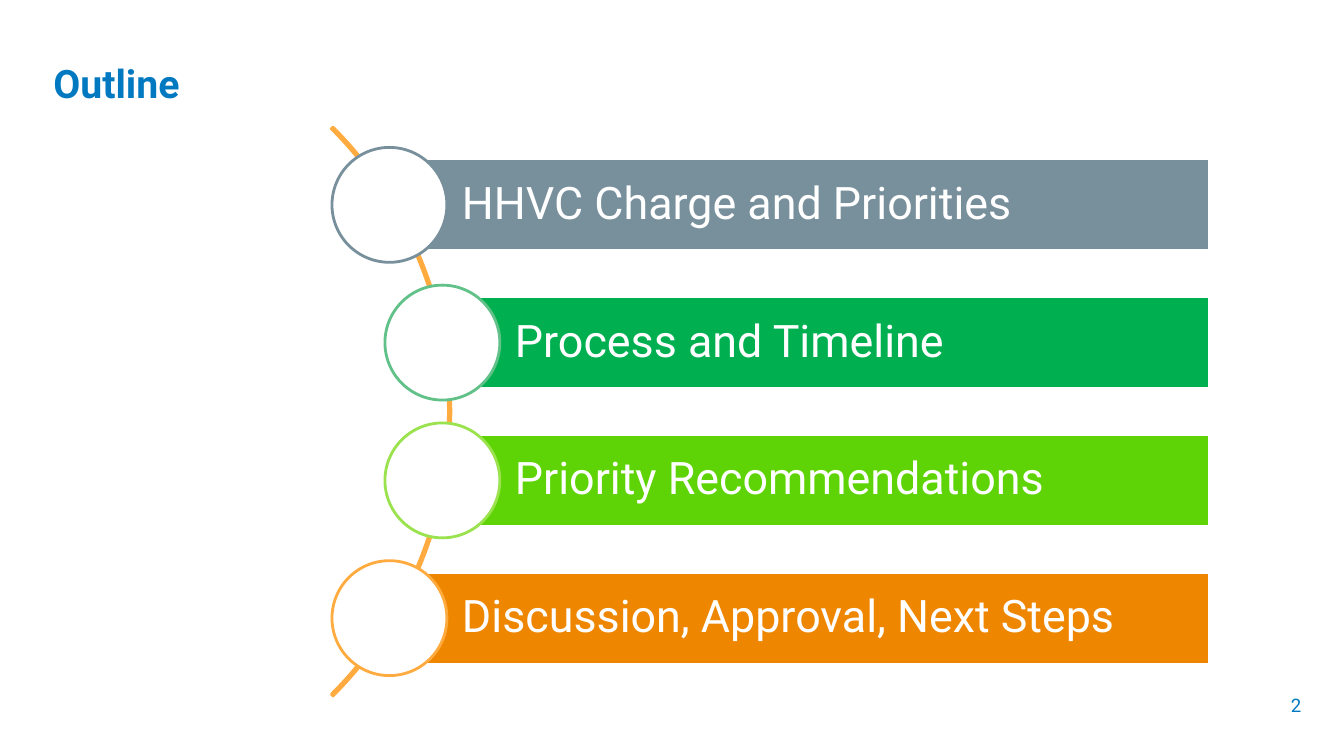
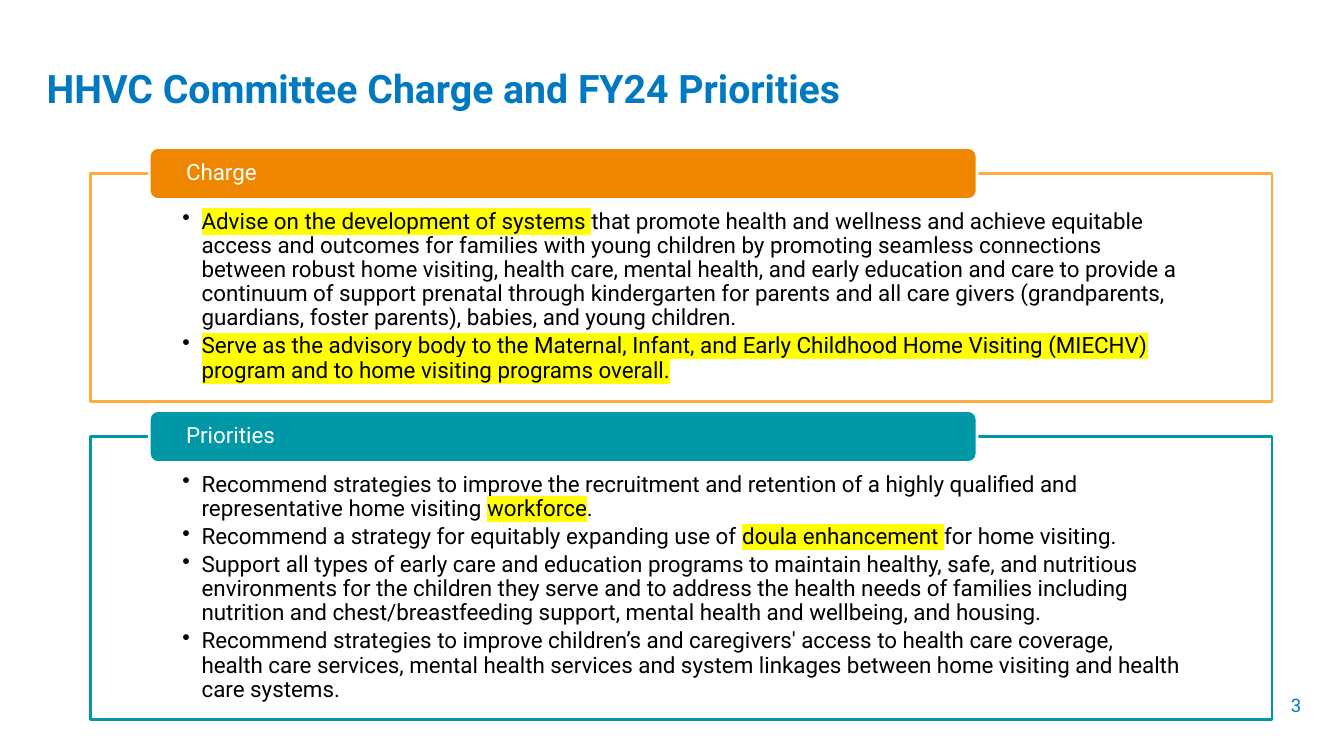
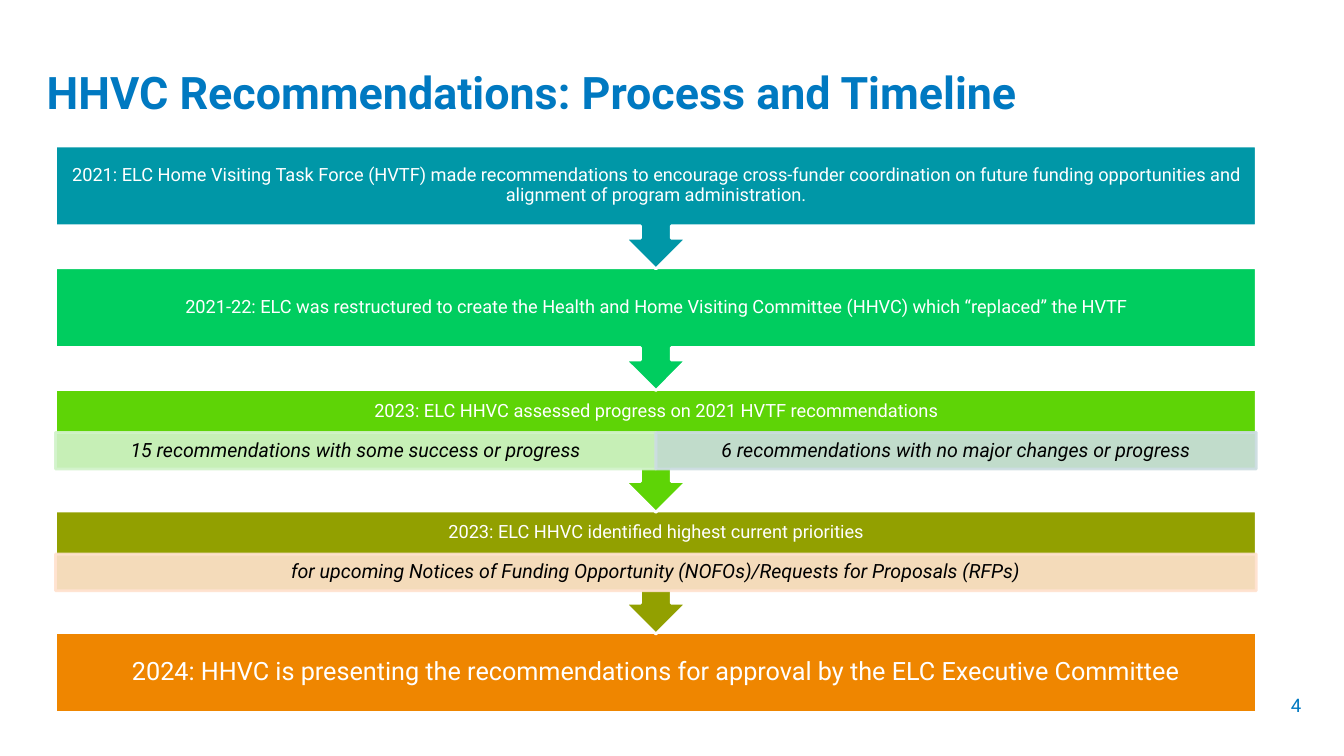
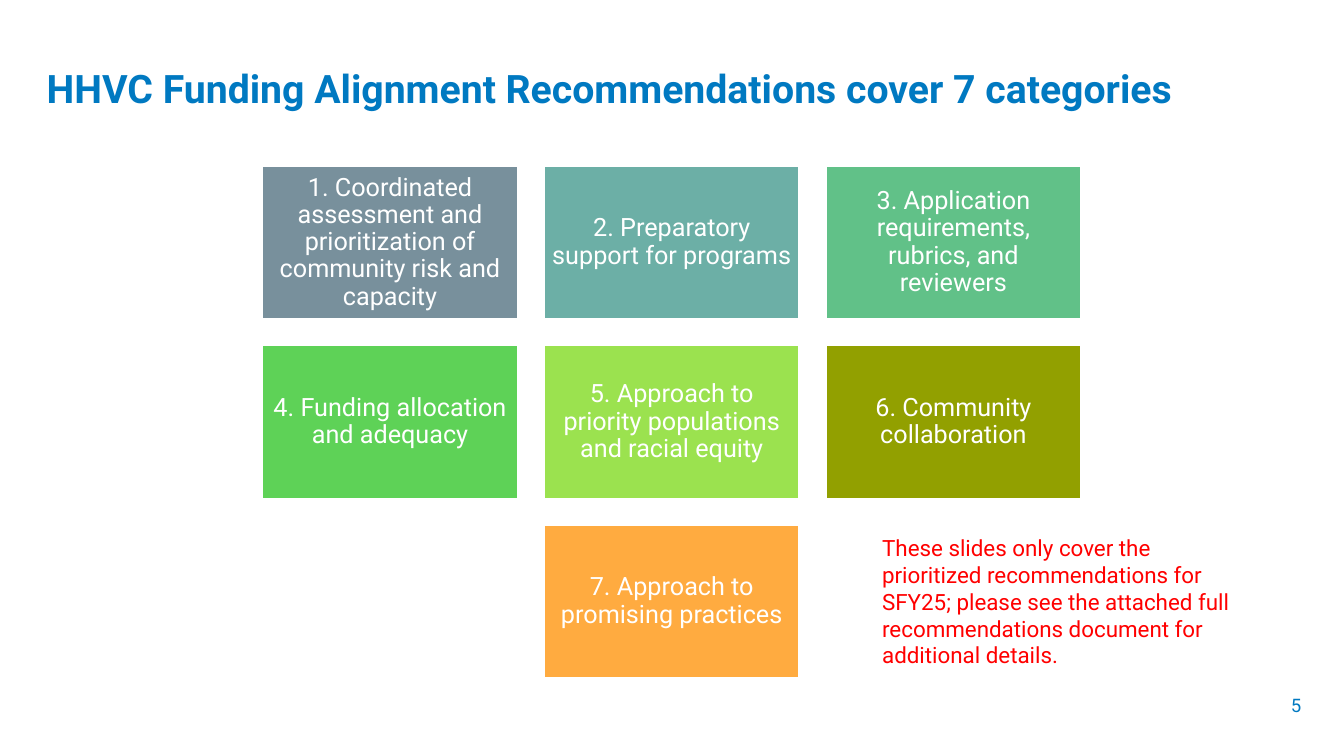
from dataclasses import dataclass

from lxml import etree
from pptx import Presentation
from pptx import util as u
from pptx.dml.color import RGBColor
from pptx.enum import shapes, text
from pptx.oxml.ns import qn

WIDTH, HEIGHT = u.Inches(13.33), u.Inches(7.5)
COLUMN, ROW = WIDTH / 100, HEIGHT / 100
FONT = "Roboto"

BLUE = RGBColor(0x00, 0x79, 0xC1)
WHITE = RGBColor(0xFF, 0xFF, 0xFF)
BLACK = RGBColor(0x00, 0x00, 0x00)
RED = RGBColor(0xFF, 0x00, 0x00)
SLATE = RGBColor(0x78, 0x90, 0x9C)
TEAL = RGBColor(0x00, 0x97, 0xA7)
SEA = RGBColor(0x6C, 0xAF, 0xA6)
MINT = RGBColor(0x61, 0xC1, 0x88)
GREEN = RGBColor(0x00, 0xB0, 0x50)
EMERALD = RGBColor(0x00, 0xCD, 0x5F)
GRASS = RGBColor(0x5E, 0xD2, 0x57)
LIME = RGBColor(0x5E, 0xD4, 0x06)
PALE_LIME = RGBColor(0x9B, 0xE2, 0x4F)
OLIVE = RGBColor(0x92, 0xA0, 0x00)
ORANGE = RGBColor(0xEF, 0x86, 0x00)
AMBER = RGBColor(0xFF, 0xAB, 0x40)
PEACH = RGBColor(0xFF, 0xE2, 0xCF)
PALE_GREEN = RGBColor(0xD2, 0xF3, 0xCA)
PALE_BLUE = RGBColor(0xCC, 0xDD, 0xE1)
HIGHLIGHT = "FFFF00"

SHAPE = shapes.MSO_SHAPE
LEFT, CENTER, RIGHT = text.PP_ALIGN.LEFT, text.PP_ALIGN.CENTER, text.PP_ALIGN.RIGHT
TOP, MIDDLE = text.MSO_ANCHOR.TOP, text.MSO_ANCHOR.MIDDLE


@dataclass
class Box:
    left: float
    top: float
    width: float
    height: float

    def inner(self, left, top, width, height):
        return Box(self.left + left, self.top + top, width, height)

    def place(self):
        return (round(self.left * COLUMN), round(self.top * ROW),
                round(self.width * COLUMN), round(self.height * ROW))


def set_frame(frame, anchor, insets):
    frame.word_wrap = True
    frame.auto_size = text.MSO_AUTO_SIZE.NONE
    frame.vertical_anchor = anchor
    (frame.margin_left, frame.margin_top,
     frame.margin_right, frame.margin_bottom) = map(u.Inches, insets)


def set_paragraph(paragraph, size, color, align=LEFT, spacing=0.9, bold=False, italic=False):
    paragraph.alignment = align
    paragraph.line_spacing = spacing
    font = paragraph.font
    font.name, font.size, font.bold, font.italic = FONT, u.Pt(size), bold, italic
    font.color.rgb = color


def write(frame, words, size, color, anchor=MIDDLE, insets=(0.1,) * 4, **style):
    set_frame(frame, anchor, insets)
    paragraph = frame.paragraphs[0]
    paragraph.text = words
    set_paragraph(paragraph, size, color, **style)
    return paragraph


def highlight(run):
    mark = etree.SubElement(run._r.get_or_add_rPr(), qn("a:highlight"))
    etree.SubElement(mark, qn("a:srgbClr")).set("val", HIGHLIGHT)


def write_bullets(frame, bullets, size, insets):
    set_frame(frame, TOP, insets)
    for index, runs in enumerate(bullets):
        paragraph = frame.add_paragraph() if index else frame.paragraphs[0]
        properties = paragraph._p.get_or_add_pPr()
        properties.set("marL", str(u.Inches(0.19)))
        properties.set("indent", str(-u.Inches(0.19)))
        etree.SubElement(properties, qn("a:buChar")).set("char", "•")
        set_paragraph(paragraph, size, BLACK)
        paragraph.space_after = u.Pt(2.8)
        for words, marked in runs:
            run = paragraph.add_run()
            run.text = words
            if marked:
                highlight(run)


def add_shape(slide, kind, box, fill=None, line=WHITE):
    shape = slide.shapes.add_shape(kind, *box.place())
    shape.shadow.inherit = False
    if fill is None:
        shape.fill.background()
    else:
        shape.fill.solid()
        shape.fill.fore_color.rgb = fill
    shape.line.color.rgb = line
    shape.line.width = u.Pt(2)
    return shape


def make_translucent(shape, percent):
    for color in shape._element.spPr.iter(qn("a:srgbClr")):
        etree.SubElement(color, qn("a:alpha")).set("val", str(percent * 1000))


def add_text(slide, box, words, size, color, **style):
    return write(slide.shapes.add_textbox(*box.place()).text_frame, words, size, color, **style)


def add_slide(presentation, title, number, size=28, box=Box(2.5, 6.8, 96.5, 12.5)):
    slide = presentation.slides.add_slide(presentation.slide_layouts[5])
    holder = slide.shapes.title
    holder.left, holder.top, holder.width, holder.height = box.place()
    write(holder.text_frame, title, size, BLUE, anchor=TOP, insets=(0.13,) * 4,
          spacing=1.0, bold=True)
    paragraph = add_text(slide, Box(51.2, 89.2, 46.6, 7.6), str(number), 13.3, BLUE,
                         insets=(0.13,) * 4, align=RIGHT, spacing=1.15)
    paragraph.space_before = u.Pt(9.3)
    return slide


def add_outline(slide, box, topics):
    circle_width, circle_height, bar_height = 8.55, 15.2, 12.13
    arc_width, arc_height = 59.85, 106.4
    pitch = (box.height - circle_height) / (len(topics) - 1)
    arc = add_shape(slide, SHAPE.BLOCK_ARC,
                    box.inner(-51, (box.height - arc_height) / 2, arc_width, arc_height),
                    line=AMBER)
    for index, value in enumerate((189, 27, 0.003)):
        arc.adjustments[index] = value
    for index, (words, fill, ring) in enumerate(topics):
        shift = 0 if index in (0, len(topics) - 1) else 3.94
        left = shift + circle_width / 2
        bar = add_shape(slide, SHAPE.RECTANGLE,
                        box.inner(left, index * pitch + (circle_height - bar_height) / 2,
                                  box.width - left, bar_height), fill)
        write(bar.text_frame, words, 32, WHITE, insets=(0.72, 0.09, 0.09, 0.09))
        add_shape(slide, SHAPE.OVAL,
                  box.inner(shift, index * pitch, circle_width, circle_height), WHITE, ring)


def add_panel(slide, box, heading, fill, line, bullets):
    drop = 3.45
    frame = add_shape(slide, SHAPE.RECTANGLE,
                      box.inner(0, drop, box.width, box.height - drop), WHITE, line)
    write_bullets(frame.text_frame, bullets, 16, (0.91, 0.36, 0.91, 0.12))
    tab = add_shape(slide, SHAPE.ROUNDED_RECTANGLE, box.inner(4.35, 0, 61.6, 2 * drop), fill)
    write(tab.text_frame, heading, 16, WHITE, insets=(0.34, 0, 0.34, 0))


def add_timeline(slide, box, steps):
    pitch, callout_height, last_height = 16.1, 16.27, 10.5
    strip_top, strip_height = 5.7, 4.85
    last = len(steps) - 1
    for index, (words, fill, strips) in reversed(list(enumerate(steps))):
        kind, height, size = SHAPE.DOWN_ARROW_CALLOUT, callout_height, 13
        if index == last:
            kind, height, size = SHAPE.RECTANGLE, last_height, 18
        step = add_shape(slide, kind, box.inner(0, index * pitch, box.width, height), fill)
        bottom = 0.46 if strips else 0.1
        write(step.text_frame, words, size, WHITE, insets=(0.1, 0.1, 0.1, bottom), align=CENTER)
        for position, (detail, tint) in enumerate(strips):
            width = box.width / len(strips)
            strip = add_shape(slide, SHAPE.RECTANGLE,
                              box.inner(position * width, index * pitch + strip_top,
                                        width, strip_height), tint, tint)
            make_translucent(strip, 90)
            write(strip.text_frame, detail, 14, BLACK, insets=(0.11, 0.02, 0.11, 0.02),
                  align=CENTER, italic=True)


def add_tiles(slide, box, tiles):
    width, height, count = 19.05, 20.4, 3
    across = (box.width - width) / (count - 1)
    down = (box.height - height) / (count - 1)
    for index, (words, fill) in enumerate(tiles):
        row, column = divmod(index, count)
        if row == count - 1:
            column = 1
        tile = add_shape(slide, SHAPE.RECTANGLE,
                         box.inner(column * across, row * down, width, height), fill)
        write(tile.text_frame, f"{index + 1}. {words}", 18, WHITE, insets=(0.07,) * 4,
              align=CENTER)


TOPICS = [
    ("HHVC Charge and Priorities", SLATE, SLATE),
    ("Process and Timeline", GREEN, MINT),
    ("Priority Recommendations", LIME, PALE_LIME),
    ("Discussion, Approval, Next Steps", ORANGE, AMBER),
]
CHARGE = [
    [("Advise on the development of systems ", True),
     ("that promote health and wellness and achieve equitable access and outcomes for families "
      "with young children by promoting seamless connections between robust home visiting, "
      "health care, mental health, and early education and care to provide a continuum of "
      "support prenatal through kindergarten for parents and all care givers (grandparents, "
      "guardians, foster parents), babies, and young children.", False)],
    [("Serve as the advisory body to the Maternal, Infant, and Early Childhood Home Visiting "
      "(MIECHV) program and to home visiting programs overall.", True)],
]
PRIORITIES = [
    [("Recommend strategies to improve the recruitment and retention of a highly qualified and "
      "representative home visiting ", False), ("workforce", True), (".", False)],
    [("Recommend a strategy for equitably expanding use of ", False),
     ("doula enhancement ", True), ("for home visiting.", False)],
    [("Support all types of early care and education programs to maintain healthy, safe, and "
      "nutritious environments for the children they serve and to address the health needs of "
      "families including nutrition and chest/breastfeeding support, mental health and "
      "wellbeing, and housing.", False)],
    [("Recommend strategies to improve children’s and caregivers' access to health care "
      "coverage, health care services, mental health services and system linkages between home "
      "visiting and health care systems.", False)],
]
STEPS = [
    ("2021: ELC Home Visiting Task Force (HVTF) made recommendations to encourage cross-funder "
     "coordination on future funding opportunities and alignment of program administration.",
     TEAL, []),
    ("2021-22: ELC was restructured to create the Health and Home Visiting Committee (HHVC) "
     "which “replaced” the HVTF", EMERALD, []),
    ("2023: ELC HHVC assessed progress on 2021 HVTF recommendations", LIME,
     [("15 recommendations with some success or progress", PALE_GREEN),
      ("6 recommendations with no major changes or progress", PALE_BLUE)]),
    ("2023: ELC HHVC identified highest current priorities", OLIVE,
     [("for upcoming Notices of Funding Opportunity (NOFOs)/Requests for Proposals (RFPs)",
       PEACH)]),
    ("2024: HHVC is presenting the recommendations for approval by the ELC Executive Committee",
     ORANGE, []),
]
CATEGORIES = [
    ("Coordinated assessment and prioritization of community risk and capacity", SLATE),
    ("Preparatory support for programs", SEA),
    ("Application requirements, rubrics, and reviewers", MINT),
    ("Funding allocation and adequacy", GRASS),
    ("Approach to priority populations and racial equity", PALE_LIME),
    ("Community collaboration", OLIVE),
    ("Approach to promising practices", AMBER),
]
NOTE = ("These slides only cover the prioritized recommendations for SFY25; please see the "
        "attached full recommendations document for additional details.")


def main():
    presentation = Presentation()
    presentation.slide_width, presentation.slide_height = WIDTH, HEIGHT

    slide = add_slide(presentation, "Outline", 2, box=Box(3, 6.13, 96.5, 12.5))
    add_outline(slide, Box(24.7, 19.5, 65.3, 69.87), TOPICS)

    slide = add_slide(presentation, "HHVC Committee Charge and FY24 Priorities", 3)
    add_panel(slide, Box(6.75, 19.5, 87.9, 33.6), "Charge", ORANGE, AMBER, CHARGE)
    add_panel(slide, Box(6.75, 54.3, 87.9, 40.9), "Priorities", TEAL, TEAL, PRIORITIES)

    slide = add_slide(presentation, "HHVC Recommendations: Process and Timeline", 4, size=32)
    add_timeline(slide, Box(4.13, 19.3, 89.35, 74.9), STEPS)

    slide = add_slide(presentation,
                      "HHVC Funding Alignment Recommendations cover 7 categories", 5)
    add_tiles(slide, Box(19.5, 21.87, 60.97, 67.87), CATEGORIES)
    add_text(slide, Box(64.9, 70, 28.65, 19.33), NOTE, 16, RED, anchor=TOP,
             insets=(0.1, 0.05, 0.1, 0.05), spacing=1.0)

    presentation.save("out.pptx")


if __name__ == "__main__":
    main()
